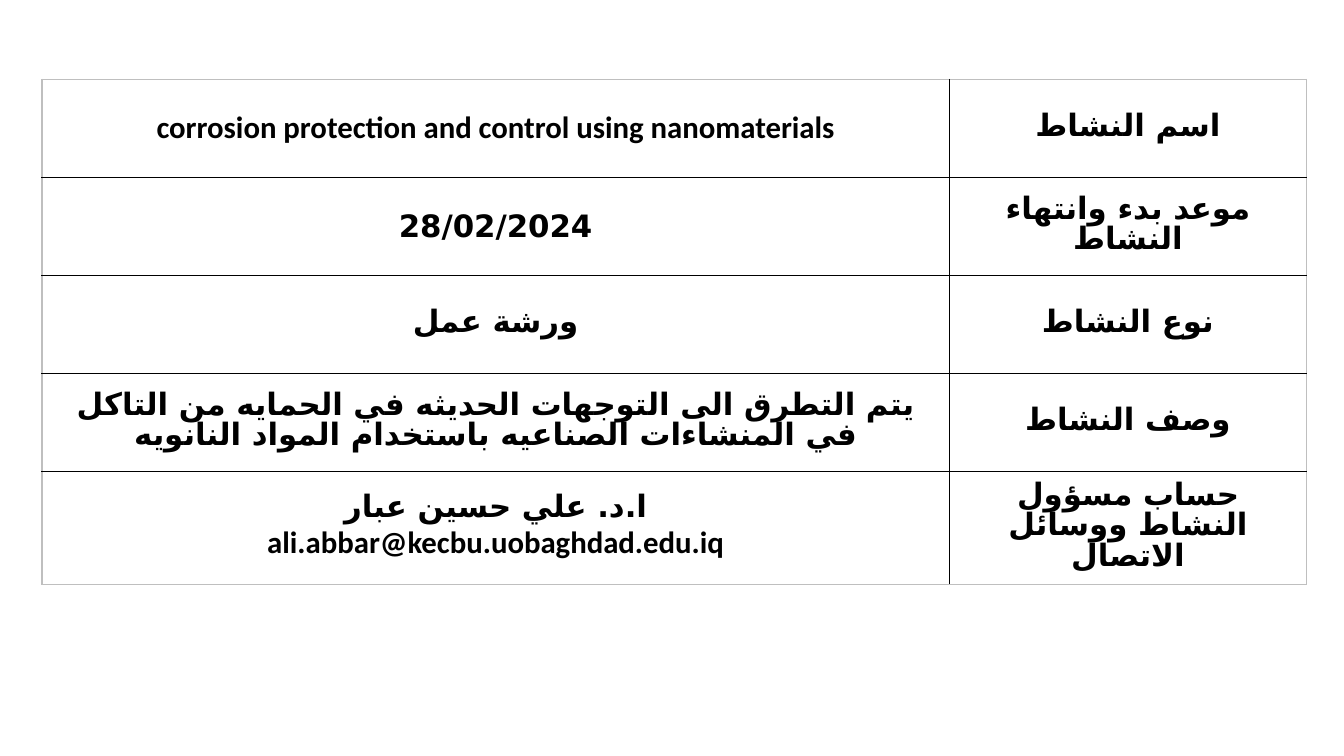
from lxml.etree import SubElement
from pptx import Presentation
from pptx.dml.color import RGBColor
from pptx.enum.text import MSO_ANCHOR, PP_ALIGN
from pptx.oxml.ns import qn
from pptx.util import Pt

FONT, ARABIC_FONT, SIZE = "Calibri", "DejaVu Sans", 22
INK, EDGE = "000000", "BFBFBF"
COLUMN_WIDTHS = [648, 255.4]
ROW_HEIGHTS = [70] * 4 + [80.6]
ACTIVITY = [
    ("corrosion protection and control using nanomaterials", "اسم النشاط"),
    ("28/02/2024", "موعد بدء وانتهاء النشاط"),
    ("ورشة عمل", "نوع النشاط"),
    ("يتم التطرق الى التوجهات الحديثه في الحمايه من التاكل في "
     "المنشاءات الصناعيه باستخدام المواد النانويه", "وصف النشاط"),
    ("ا.د. علي حسين عبار\nali.abbar@kecbu.uobaghdad.edu.iq",
     "حساب مسؤول النشاط ووسائل الاتصال"),
]


def rgb(color):
    return RGBColor.from_string(color)


def set_border(cell, side, color):
    """Draw one side (L, R, T or B) of a cell; call before setting its fill."""
    ln = SubElement(cell._tc.get_or_add_tcPr(), qn(f"a:ln{side}"), w=str(Pt(1)))
    fill = SubElement(ln, qn("a:solidFill"))
    SubElement(fill, qn("a:srgbClr"), val=color)


def format_paragraph(p):
    p.alignment = PP_ALIGN.CENTER
    p._p.get_or_add_pPr().set("rtl", "1")
    if not p.text.isascii():
        p.line_spacing = Pt(SIZE)
    for r in p.runs:
        r.font.name = FONT
        r.font.size = Pt(SIZE)
        r.font.bold = True
        r.font.color.rgb = rgb(INK)
        SubElement(r._r.get_or_add_rPr(), qn("a:cs"), typeface=ARABIC_FONT)


def add_activity_table(slide, left, top):
    rows, cols = len(ROW_HEIGHTS), len(COLUMN_WIDTHS)
    table = slide.shapes.add_table(
        rows, cols, Pt(left), Pt(top),
        Pt(sum(COLUMN_WIDTHS)), Pt(sum(ROW_HEIGHTS))).table
    table.first_row = table.horz_banding = False
    for column, width in zip(table.columns, COLUMN_WIDTHS):
        column.width = Pt(width)
    for row, height in zip(table.rows, ROW_HEIGHTS):
        row.height = Pt(height)
    for i, texts in enumerate(ACTIVITY):
        for j, text in enumerate(texts):
            cell = table.cell(i, j)
            outer = {"L": j == 0, "R": j == cols - 1,
                     "T": i == 0, "B": i == rows - 1}
            for side, is_outer in outer.items():
                set_border(cell, side, EDGE if is_outer else INK)
            cell.fill.background()
            cell.vertical_anchor = MSO_ANCHOR.MIDDLE
            cell.text_frame.text = text
            for p in cell.text_frame.paragraphs:
                format_paragraph(p)


def main():
    prs = Presentation()
    prs.slide_width, prs.slide_height = Pt(960), Pt(540)
    slide = prs.slides.add_slide(prs.slide_layouts[6])
    add_activity_table(slide, 30, 56.7)
    prs.save("out.pptx")


if __name__ == "__main__":
    main()
